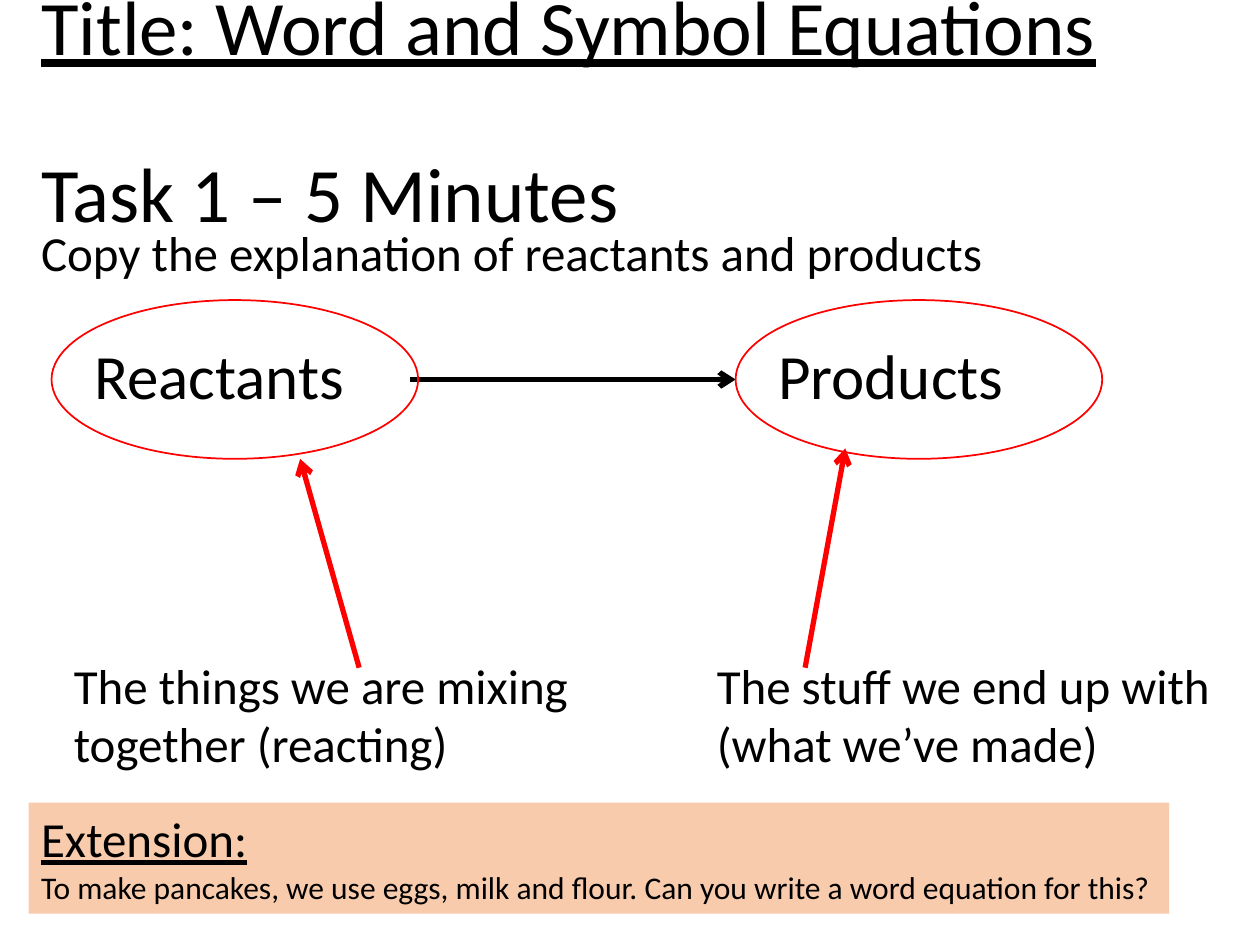
from pptx import Presentation
from pptx.dml.color import RGBColor
from pptx.enum.shapes import MSO_CONNECTOR, MSO_SHAPE
from pptx.enum.text import MSO_ANCHOR, PP_ALIGN
from pptx.oxml.ns import qn
from pptx.util import Cm, Pt
from lxml import etree

LINE = MSO_CONNECTOR.STRAIGHT
OVAL, RECT = MSO_SHAPE.OVAL, MSO_SHAPE.RECTANGLE
TOP, MID = MSO_ANCHOR.TOP, MSO_ANCHOR.MIDDLE
LEFT = PP_ALIGN.LEFT

COLORS = {"ink": "000000", "red": "FF0000", "peach": "F8CBAD"}
FONT = "Calibri"
HEAD = {"size": Pt(44)}
NOTE = {"size": Pt(28)}
TERM = {"size": Pt(36)}
SMALL = {"size": Pt(18)}
UNDER = {"underline": True}


def rgb(name):
    return RGBColor.from_string(COLORS[name])


def write(frame, rows, anchor=TOP, **para):
    """Fill a text frame with rows of (text, font values)."""
    frame.word_wrap = True
    frame.vertical_anchor = anchor
    for i, (text, look) in enumerate(rows):
        p = frame.add_paragraph() if i else frame.paragraphs[0]
        for key, val in {"alignment": LEFT, **para}.items():
            setattr(p, key, val)
        run = p.add_run()
        run.text = text
        for key, val in {"name": FONT, **look}.items():
            setattr(run.font, key, val)
        run.font.color.rgb = rgb("ink")


def label(slide, box, rows, **form):
    item = slide.shapes.add_textbox(*map(Cm, box))
    write(item.text_frame, rows, **form)
    return item


def arrow(slide, start, end, color):
    line = slide.shapes.add_connector(LINE, *map(Cm, start + end))
    line.line.color.rgb = rgb(color)
    line.line.width = Pt(3)
    ln = line.line._get_or_add_ln()
    etree.SubElement(ln, qn("a:tailEnd"), type="arrow")
    etree.SubElement(line._element.spPr, qn("a:effectLst"))


def header(slide, x, y):
    # The gap between title and task is one line high
    title = label(slide, (x, y, 21.89, 3.68),
                  [("Title: Word and Symbol Equations", {**HEAD, **UNDER}),
                   ("Task 1 – 5 Minutes", HEAD)],
                  anchor=MID, line_spacing=0.9)
    title.text_frame.paragraphs[1].space_before = Pt(48)
    label(slide, (x, y + 4.04, 22.02, 1.32),
          [("Copy the explanation of reactants and products", NOTE)],
          line_spacing=0.9)


def term(slide, x, y, word, note, shift, start, end):
    """Ringed word, its note below, and an arrow from note to ring."""
    label(slide, (x + 0.61, y + 0.61, 8.8, 1.8), [(word, TERM)])
    ring = slide.shapes.add_shape(OVAL, *map(Cm, (x, y, 7.39, 3.2)))
    ring.shadow.inherit = False
    ring.fill.background()
    ring.line.color.rgb = rgb("red")
    ring.line.width = Pt(1)
    arrow(slide, (x + start[0], y + start[1]),
          (x + end[0], y + end[1]), "red")
    label(slide, (x + shift, y + 7.03, 11.2, 2.64), [(note, NOTE)])


def extra(slide, x, y, w, h):
    panel = slide.shapes.add_shape(RECT, *map(Cm, (x, y, w, h)))
    panel.shadow.inherit = False
    panel.fill.solid()
    panel.fill.fore_color.rgb = rgb("peach")
    panel.line.fill.background()
    write(panel.text_frame,
          [("Extension:", {**NOTE, **UNDER}),
           ("To make pancakes, we use eggs, milk and flour. "
            "Can you write a word equation for this?", SMALL)])


def main():
    deck = Presentation()
    deck.slide_width, deck.slide_height = Cm(25.4), Cm(19.05)
    slide = deck.slides.add_slide(deck.slide_layouts[6])

    header(slide, 0.58, 0.46)

    # Reaction: reactants lead to products
    arrow(slide, (8.26, 7.65), (14.83, 7.65), "ink")
    term(slide, 1.04, 6.05, "Reactants",
         "The things we are mixing together (reacting)",
         0.2, (6.2, 7.41), (5.01, 3.2))
    term(slide, 14.83, 6.05, "Products",
         "The stuff we end up with (what we’ve made)",
         -0.63, (1.4, 7.41), (2.21, 2.99))

    extra(slide, 0.58, 16.18, 22.99, 2.24)
    deck.save("out.pptx")


if __name__ == "__main__":
    main()
